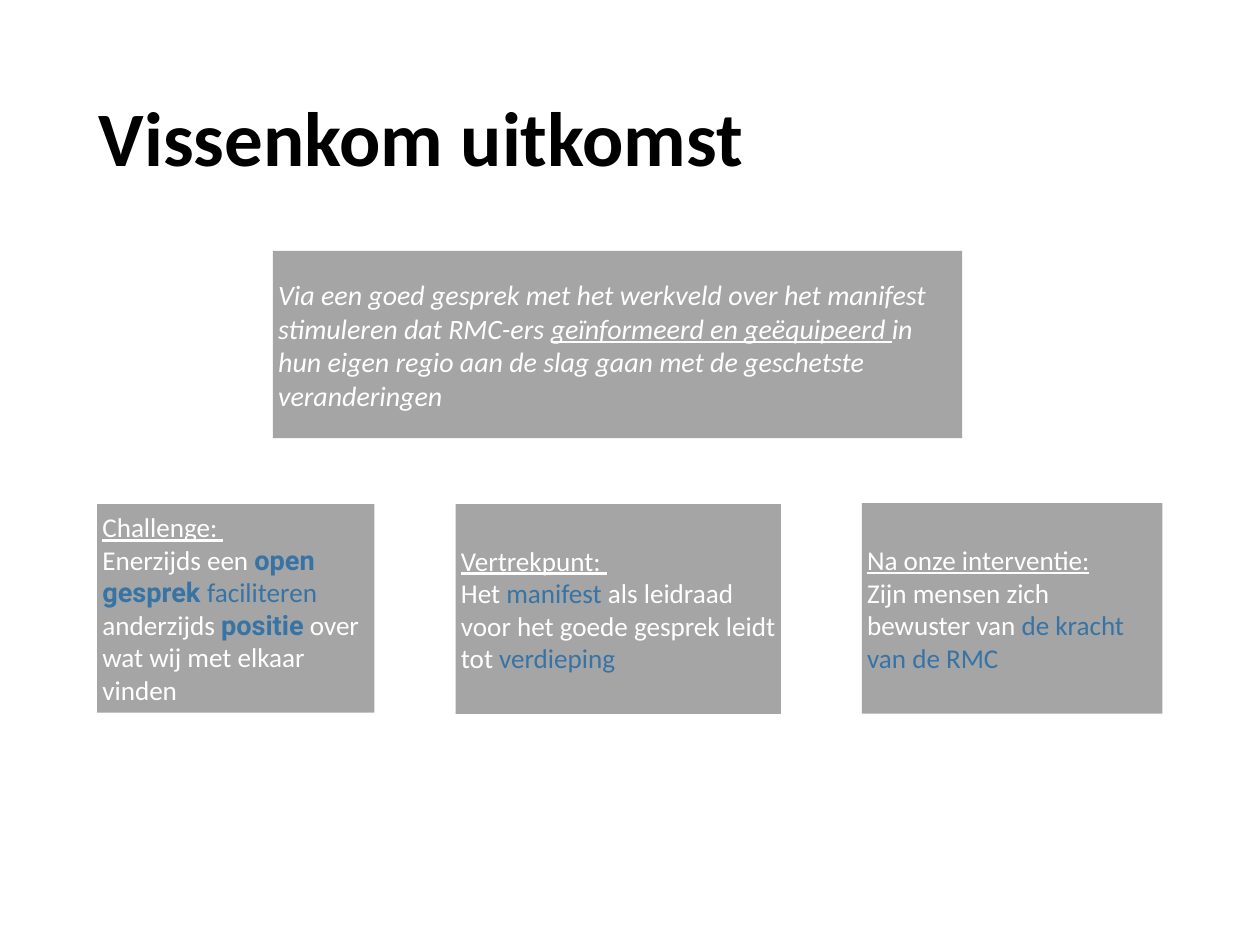
from pptx import Presentation
from pptx.dml.color import RGBColor
from pptx.enum.shapes import MSO_SHAPE as Shape
from pptx.enum.text import MSO_ANCHOR as Anchor, PP_ALIGN as Align
from pptx.util import Pt

BLACK = RGBColor(0x00, 0x00, 0x00)
WHITE = RGBColor(0xFF, 0xFF, 0xFF)
GREY = RGBColor(0xA5, 0xA5, 0xA5)
BLUE = RGBColor(0x37, 0x74, 0xA5)

# Run styles
PLAIN = {}
UNDERLINED = {"underline": True}
ACCENT = {"color": BLUE}
STRONG = {"color": BLUE, "name": "Roboto", "bold": True}


class SlideBuilder:
    font_name = "Calibri"
    inset = 3

    def __init__(self, slide):
        self.slide = slide

    def style_font(self, font, size, color):
        font.name = self.font_name
        font.size = Pt(size)
        font.color.rgb = color

    def add_run(self, paragraph, text, color=None, **attributes):
        run = paragraph.add_run()
        run.text = text
        if color is not None:
            run.font.color.rgb = color
        for attribute, value in attributes.items():
            setattr(run.font, attribute, value)

    def title(self, text, left, top, width, height):
        box = self.slide.shapes.add_textbox(Pt(left), Pt(top), Pt(width), Pt(height))
        frame = box.text_frame
        frame.word_wrap = True
        frame.vertical_anchor = Anchor.MIDDLE
        heading = frame.paragraphs[0]
        heading.text = text
        heading.line_spacing = 0.9
        self.style_font(heading.font, 44, BLACK)
        heading.font.bold = True

    def card(self, lines, left, top, width, height, size, italic=None):
        panel = self.slide.shapes.add_shape(
            Shape.RECTANGLE, Pt(left), Pt(top), Pt(width), Pt(height))
        panel.shadow.inherit = False
        panel.fill.solid()
        panel.fill.fore_color.rgb = GREY
        panel.line.fill.background()
        frame = panel.text_frame
        frame.word_wrap = True
        frame.vertical_anchor = Anchor.MIDDLE
        frame.margin_left = frame.margin_right = Pt(self.inset)
        frame.margin_top = frame.margin_bottom = Pt(self.inset)
        for index, runs in enumerate(lines):
            paragraph = frame.add_paragraph() if index else frame.paragraphs[0]
            paragraph.alignment = Align.LEFT
            self.style_font(paragraph.font, size, WHITE)
            paragraph.font.italic = italic
            for text, style in runs:
                self.add_run(paragraph, text, **style)


def main():
    presentation = Presentation()
    presentation.slide_width, presentation.slide_height = Pt(720), Pt(540)
    builder = SlideBuilder(
        presentation.slides.add_slide(presentation.slide_layouts[6]))

    builder.title("Vissenkom uitkomst", 49.5, 28.75, 621, 104.4)

    # Goal
    goal = [
        ("Via een goed gesprek met het werkveld over het manifest "
         "stimuleren dat RMC-ers ", PLAIN),
        ("geïnformeerd en geëquipeerd ", UNDERLINED),
        ("in hun eigen regio aan de slag gaan met de geschetste "
         "veranderingen", PLAIN),
    ]
    builder.card([goal], 156, 143.4, 393.8, 107, 16, italic=True)

    # Challenge, starting point and result: heading, body, place
    outcomes = [
        ("Challenge: ",
         [("Enerzijds een ", PLAIN), ("open gesprek ", STRONG),
          ("faciliteren ", ACCENT), ("anderzijds ", PLAIN),
          ("positie", STRONG), (" over wat wij met elkaar vinden", PLAIN)],
         (55.5, 288, 158.5, 119.2)),
        ("Vertrekpunt: ",
         [("Het ", PLAIN), ("manifest ", ACCENT),
          ("als leidraad voor het goede gesprek leidt tot ", PLAIN),
          ("verdieping", ACCENT)],
         (260.4, 288, 185.8, 120)),
        ("Na onze interventie:",
         [("Zijn mensen zich bewuster van ", PLAIN),
          ("de kracht van de RMC", ACCENT)],
         (492.5, 287.5, 171.8, 120.4)),
    ]
    for heading, body, place in outcomes:
        builder.card([[(heading, UNDERLINED)], body], *place, size=15.5)

    presentation.save("out.pptx")


if __name__ == "__main__":
    main()
